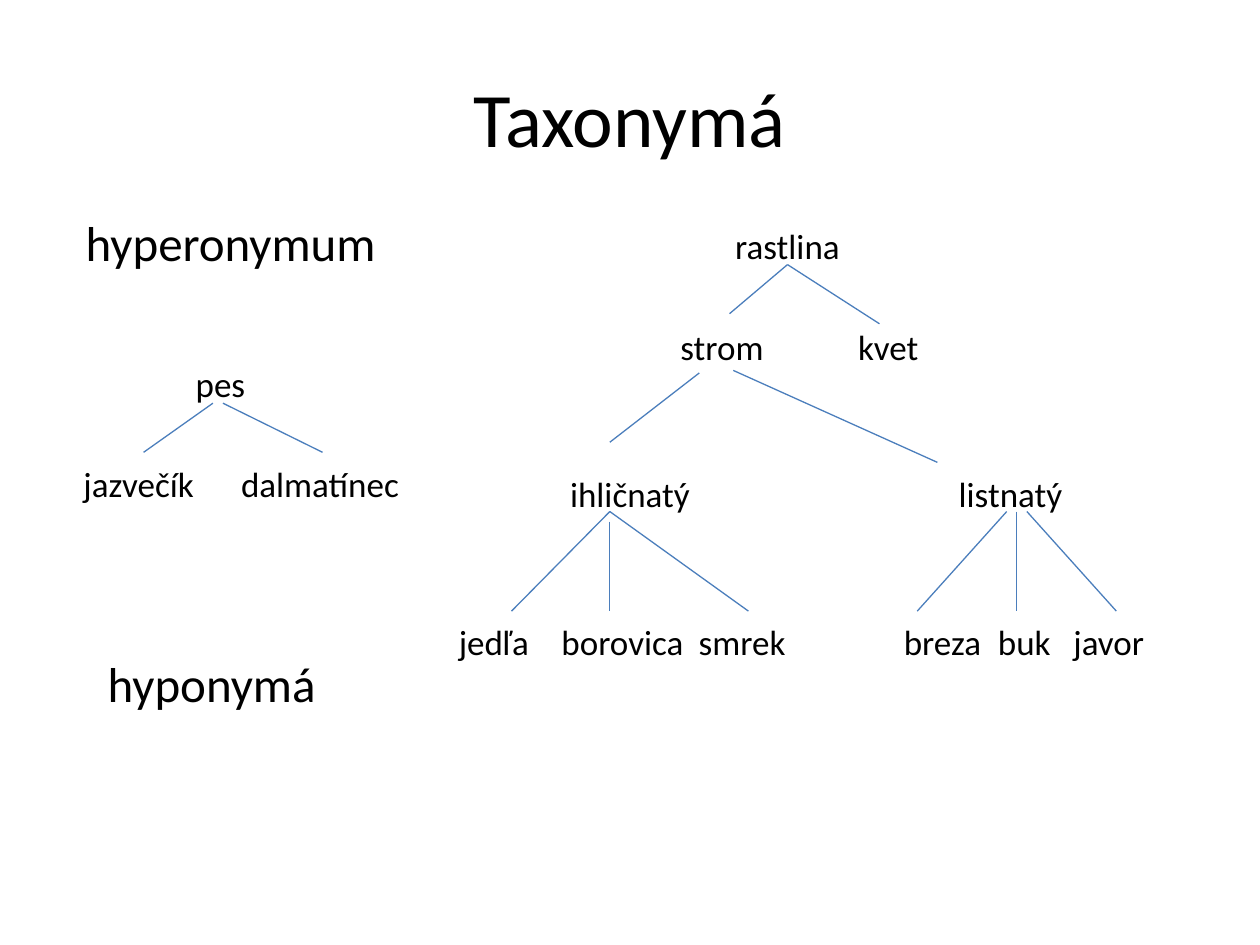
from lxml import etree
from pptx import Presentation
from pptx.dml.color import RGBColor
from pptx.enum.shapes import MSO_CONNECTOR
from pptx.enum.text import MSO_ANCHOR, PP_ALIGN
from pptx.oxml.ns import qn
from pptx.util import Inches, Pt

COLORS = {"text": "000000", "branch": "4B7EBC"}

# Each row of words: centre height, then (word, centre from the left)
WORD_ROWS = [
    (1.95, [("rastlina", 6.25)]),
    (2.75, [("strom", 5.73), ("kvet", 7.05)]),
    (3.04, [("pes", 1.75)]),
    (3.84, [("jazvečík", 1.1), ("dalmatínec", 2.54)]),
    (3.92, [("ihličnatý", 5.0), ("listnatý", 8.02)]),
    (5.09, [("jedľa", 3.92), ("borovica", 4.94), ("smrek", 5.89),
            ("breza", 7.48), ("buk", 8.13), ("javor", 8.8)]),
]
LEVEL_LABELS = [("hyperonymum", 1.83, 1.92), ("hyponymá", 1.68, 5.42)]

# Each branch runs from its parent word to its child word
BRANCHES = [
    ((6.25, 2.1), (5.79, 2.49)), ((6.25, 2.1), (6.98, 2.57)),
    ((5.55, 2.96), (4.84, 3.51)), ((5.82, 2.94), (7.44, 3.67)),
    ((4.84, 4.06), (4.06, 4.85)), ((4.84, 4.14), (4.84, 4.85)),
    ((4.84, 4.06), (5.94, 4.85)), ((7.99, 4.06), (7.28, 4.85)),
    ((8.07, 4.06), (8.07, 4.85)), ((8.15, 4.06), (8.86, 4.85)),
    ((1.69, 3.2), (1.14, 3.59)), ((1.77, 3.2), (2.56, 3.59)),
]


class TreeSlide:
    font_name = "Calibri"
    word_size = 20
    label_size = 28
    title_size = 44

    def __init__(self, presentation):
        self.slide = presentation.slides.add_slide(presentation.slide_layouts[5])

    def _write(self, frame, text, size):
        frame.vertical_anchor = MSO_ANCHOR.MIDDLE
        paragraph = frame.paragraphs[0]
        paragraph.alignment = PP_ALIGN.CENTER
        run = paragraph.add_run()
        run.text = text
        run.font.name = self.font_name
        run.font.size = Pt(size)
        run.font.color.rgb = RGBColor.from_string(COLORS["text"])

    def title(self, text):
        heading = self.slide.shapes.title
        heading.left, heading.top = Inches(0.5), Inches(0.3)
        heading.width, heading.height = Inches(9), Inches(1.25)
        self._write(heading.text_frame, text, self.title_size)

    def word(self, text, center_x, center_y, size=word_size):
        """Put one word in a box centred on the given point."""
        width = len(text) * size * 0.65 / 72
        height = size * 1.22 / 72
        box = self.slide.shapes.add_textbox(
            Inches(center_x - width / 2), Inches(center_y - height / 2),
            Inches(width), Inches(height))
        frame = box.text_frame
        frame.word_wrap = False
        frame.margin_left = frame.margin_right = 0
        frame.margin_top = frame.margin_bottom = 0
        self._write(frame, text, size)

    def branch(self, start, end):
        line = self.slide.shapes.add_connector(
            MSO_CONNECTOR.STRAIGHT, *map(Inches, start + end))
        line.line.color.rgb = RGBColor.from_string(COLORS["branch"])
        line.line.width = Pt(0.75)
        etree.SubElement(line._element.spPr, qn("a:effectLst"))


def main():
    presentation = Presentation()
    presentation.slide_width = Inches(10)
    presentation.slide_height = Inches(7.5)

    tree = TreeSlide(presentation)
    tree.title("Taxonymá")
    for label, center_x, center_y in LEVEL_LABELS:
        tree.word(label, center_x, center_y, tree.label_size)
    for center_y, words in WORD_ROWS:
        for word, center_x in words:
            tree.word(word, center_x, center_y)
    for parent, child in BRANCHES:
        tree.branch(parent, child)

    presentation.save("out.pptx")


if __name__ == "__main__":
    main()
